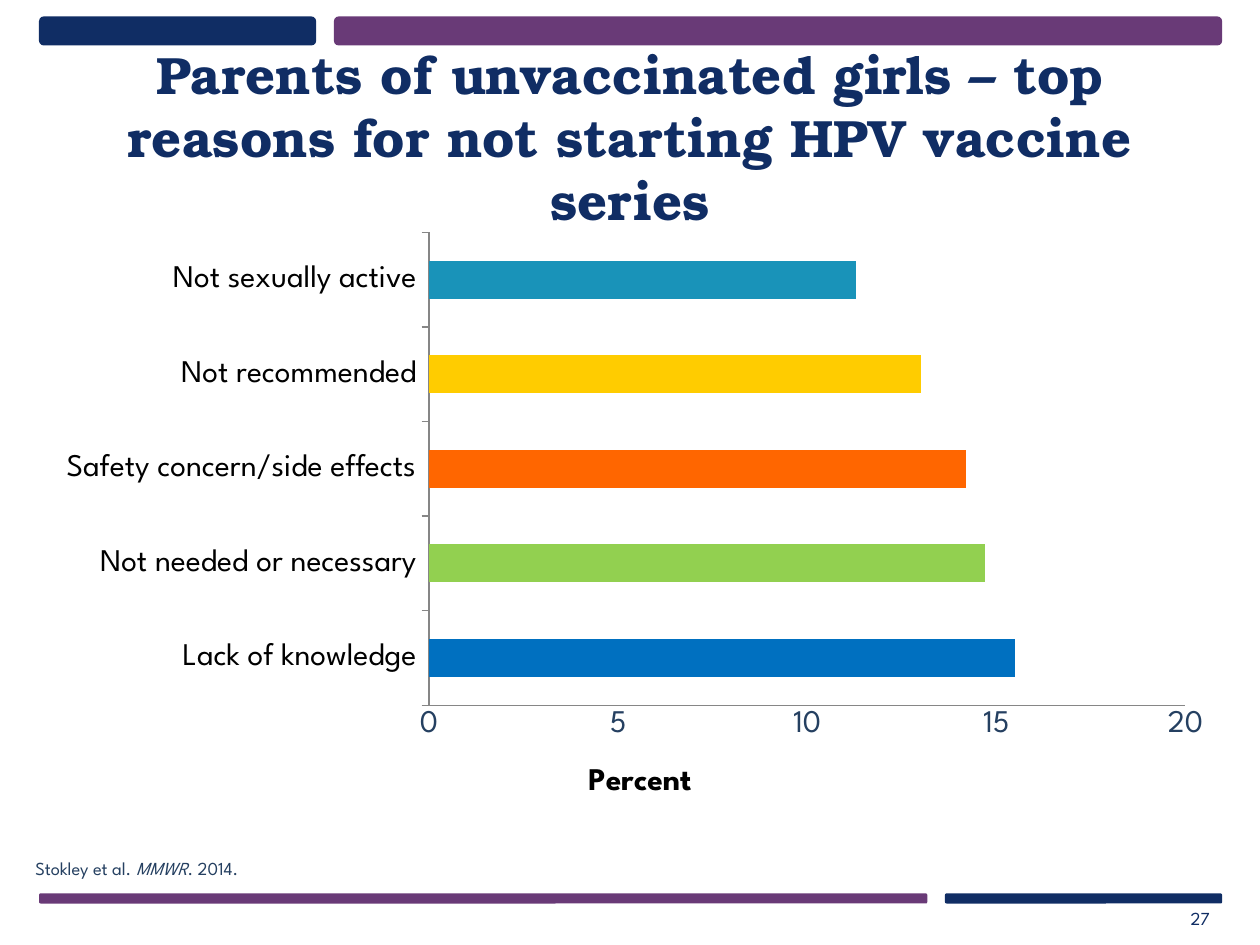
from pptx import Presentation
from pptx.chart.data import CategoryChartData
from pptx.dml.color import RGBColor
from pptx.enum.chart import XL_CHART_TYPE as CT, XL_TICK_MARK as TM
from pptx.enum.shapes import MSO_SHAPE as SHAPE
from pptx.enum.text import MSO_ANCHOR as ANCHOR, PP_ALIGN as AL
from pptx.oxml import parse_xml
from pptx.oxml.ns import nsdecls
from pptx.util import Pt

COLORS = {k: RGBColor.from_string(v) for k, v in {
    "navy": "102D64", "purple": "693A77", "slate": "254061",
    "black": "000000", "axis": "868686"}.items()}
SANS, SERIF = "League Spartan", "TeX Gyre Bonum"


def add_text(box, runs, fmt, align=AL.LEFT, insets=(7.2, 3.6)):
    """Add a middle-anchored text box; runs are (text, italic) pairs."""
    tf = s.shapes.add_textbox(*map(Pt, box)).text_frame
    tf.word_wrap = True
    tf.vertical_anchor = ANCHOR.MIDDLE
    tf.margin_left = tf.margin_right = Pt(insets[0])
    tf.margin_top = tf.margin_bottom = Pt(insets[1])
    p = tf.paragraphs[0]
    p.alignment = align
    for text, italic in runs:
        r = p.add_run()
        r.text = text
        style_font(r.font, **fmt, italic=italic)


def style_font(font, color, **fmt):
    font.color.rgb = COLORS[color]
    for name, value in fmt.items():
        setattr(font, name, value)


prs = Presentation()
prs.slide_width, prs.slide_height = Pt(720), Pt(540)
s = prs.slides.add_slide(prs.slide_layouts[6])

# Header and footer bars
for x, y, w, h, color in [
        (190.8, 9.4, 507.6, 16.6, "purple"), (22.3, 9.4, 158.4, 16.6, "navy"),
        (22.3, 510.5, 507.6, 5.8, "purple"), (540, 510.5, 158.4, 5.8, "navy")]:
    sp = s.shapes.add_shape(SHAPE.ROUNDED_RECTANGLE, Pt(x), Pt(y), Pt(w), Pt(h))
    sp.shadow.inherit = False
    sp.fill.solid()
    sp.fill.fore_color.rgb = COLORS[color]
    sp.line.fill.background()

# Source, slide number and title
small = {"name": SANS, "size": Pt(10.5)}
add_text((20.2, 481.7, 288.7, 28.8),
         [("Stokley et al. ", False), ("MMWR", True), (". 2014.", False)],
         {**small, "color": "slate"}, insets=(0, 3.6))
add_text((668.2, 510.5, 30.2, 28.8), [("27", False)],
         {**small, "color": "navy"}, AL.RIGHT)
add_text((22.3, 29.5, 675.4, 96.5),
         [("Parents of unvaccinated girls – top reasons for not starting "
           "HPV vaccine series", False)],
         {"name": SERIF, "size": Pt(30), "bold": True, "color": "navy"}, AL.CENTER)

# Reasons chart
reasons = [("Lack of knowledge", 15.5, "0070C0"),
           ("Not needed or necessary", 14.7, "92D050"),
           ("Safety concern/side effects", 14.2, "FF6600"),
           ("Not recommended", 13, "FFCC00"),
           ("Not sexually active", 11.3, "1993B9")]
data = CategoryChartData()
data.categories = [name for name, _, _ in reasons]
data.add_series("Series 1", [value for _, value, _ in reasons])
chart = s.shapes.add_chart(CT.BAR_CLUSTERED, Pt(22.3), Pt(126), Pt(675.4),
                           Pt(342), data).chart
chart.has_legend = chart.has_title = False
style_font(chart.font, "black", name=SANS, size=Pt(18))
plot = chart.plots[0]
plot.gap_width = 150
plot.vary_by_categories = False
for i, (_, _, color) in enumerate(reasons):
    fill = plot.series[0].points[i].format.fill
    fill.solid()
    fill.fore_color.rgb = RGBColor.from_string(color)

cat, val = chart.category_axis, chart.value_axis
for axis, tick, color in [(cat, TM.OUTSIDE, "black"), (val, TM.NONE, "slate")]:
    axis.has_major_gridlines = False
    axis.major_tick_mark = tick
    axis.minor_tick_mark = TM.NONE
    axis.format.line.color.rgb = COLORS["axis"]
    axis.format.line.width = Pt(0.75)
    style_font(axis.tick_labels.font, color, name=SANS, size=Pt(18))
val.minimum_scale, val.maximum_scale, val.major_unit = 0, 20, 5
val.tick_labels.number_format = "General"
val.tick_labels.number_format_is_linked = False
tf = val.axis_title.text_frame
tf.text = "Percent"
style_font(tf.paragraphs[0].runs[0].font, "black", name=SANS, size=Pt(18), bold=True)

# Fixed places for the plot and the axis title, as fractions of the chart
area = chart.plots[0]._element.getparent()
for old in area.findall("{*}layout"):
    area.remove(old)
title = val.axis_title._element
for old in title.findall("{*}layout"):
    title.remove(old)
for parent, index, target, fractions in [
        (area, 0, '<c:layoutTarget val="inner"/>',
         {"x": 0.33, "y": 0.02, "w": 0.64, "h": 0.79}),
        (title, 1, "", {"x": 0.46, "y": 0.9})]:
    modes = "".join(f'<c:{k}Mode val="edge"/>' for k in "xy")
    sizes = "".join(f'<c:{k} val="{v}"/>' for k, v in fractions.items())
    parent.insert(index, parse_xml(
        f'<c:layout {nsdecls("c")}><c:manualLayout>{target}{modes}{sizes}'
        '</c:manualLayout></c:layout>'))

prs.save("out.pptx")
